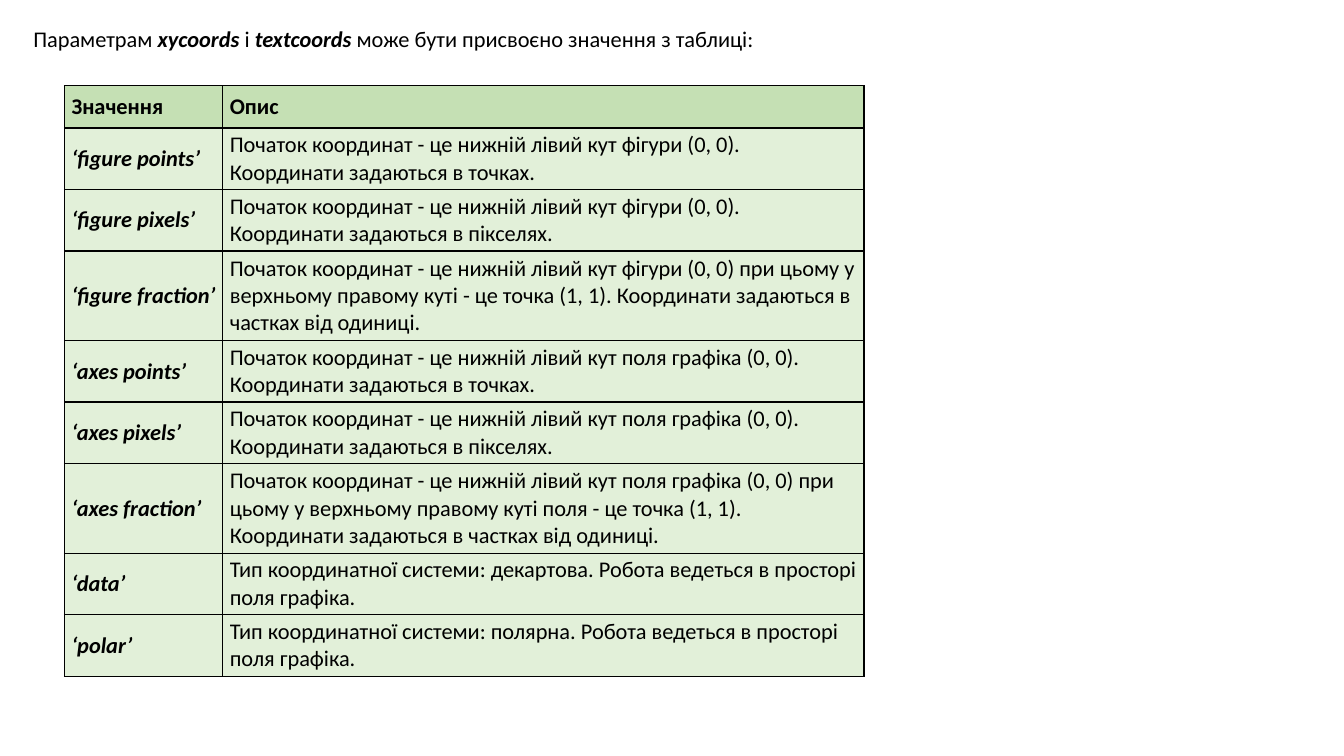
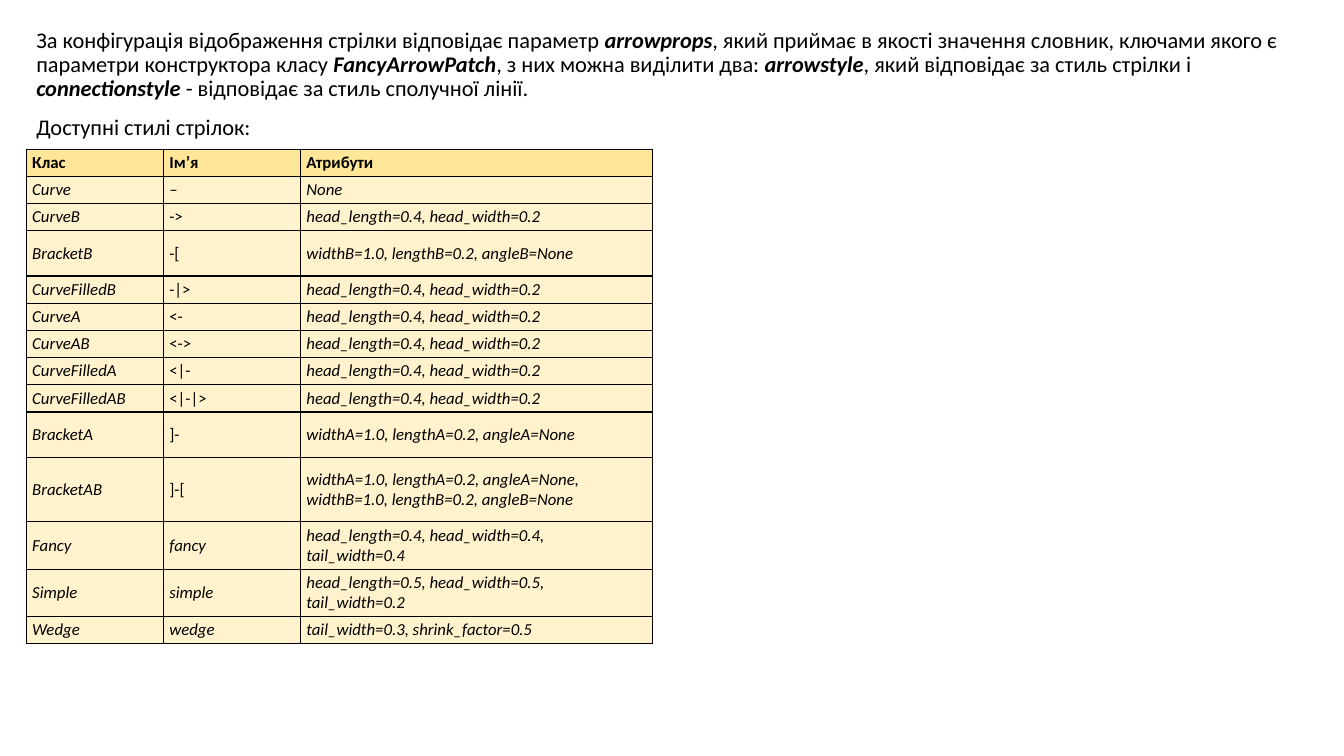
from dataclasses import dataclass

import lxml.etree
import pptx
import pptx.dml.color
import pptx.enum.text
import pptx.oxml.ns
import pptx.slide
import pptx.table
import pptx.text.text
import pptx.util
from pptx.util import Inches


@dataclass(frozen=True)
class Theme:
    font: str = "Calibri"
    ink: str = "000000"
    green_head: str = "C5E0B4"
    green_body: str = "E2F0D9"
    yellow_head: str = "FFE699"
    yellow_body: str = "FFF2CC"
    text_size: int = 16
    small_size: int = 12
    border: int = 1


THEME = Theme()


@dataclass(frozen=True)
class Column:
    heading: str
    width: float
    bold: bool = False
    italic: bool = False


@dataclass(frozen=True)
class Row:
    height: float
    values: tuple[str, ...]


@dataclass(frozen=True)
class Grid:
    left: float
    top: float
    head_height: float
    side_margin: float
    size: int
    head_fill: str
    body_fill: str
    columns: tuple[Column, ...]
    rows: tuple[Row, ...]


ORIGIN = "Початок координат - це нижній лівий кут "
FIGURE = ORIGIN + "фігури (0, 0)"
AXES = ORIGIN + "поля графіка (0, 0)"
IN_POINTS = ". Координати задаються в точках."
IN_PIXELS = ". Координати задаються в пікселях."
IN_FRACTIONS = " - це точка (1, 1). Координати задаються в частках від одиниці."
TOP_RIGHT = " при цьому у верхньому правому куті"
SYSTEM = "Тип координатної системи: {}. Робота ведеться в просторі поля графіка."
TWO_LINES, THREE_LINES = 0.61, 0.89

COORDINATES = Grid(
    left=0.64, top=0.85, head_height=0.42, side_margin=0.07, size=THEME.text_size,
    head_fill=THEME.green_head, body_fill=THEME.green_body,
    columns=(Column("Значення", 1.57, bold=True, italic=True), Column("Опис", 6.36)),
    rows=(
        Row(TWO_LINES, ("‘figure points’", FIGURE + IN_POINTS)),
        Row(TWO_LINES, ("‘figure pixels’", FIGURE + IN_PIXELS)),
        Row(THREE_LINES, ("‘figure fraction’", FIGURE + TOP_RIGHT + IN_FRACTIONS)),
        Row(TWO_LINES, ("‘axes points’", AXES + IN_POINTS)),
        Row(TWO_LINES, ("‘axes pixels’", AXES + IN_PIXELS)),
        Row(THREE_LINES, ("‘axes fraction’", AXES + TOP_RIGHT + " поля" + IN_FRACTIONS)),
        Row(TWO_LINES, ("‘data’", SYSTEM.format("декартова"))),
        Row(TWO_LINES, ("‘polar’", SYSTEM.format("полярна"))),
    ),
)

HEAD = "head_length=0.4, head_width=0.2"
BRACKET_A = "widthA=1.0, lengthA=0.2, angleA=None"
BRACKET_B = "widthB=1.0, lengthB=0.2, angleB=None"
SINGLE, BRACKET, DOUBLE_BRACKET, WRAPPED = 0.27, 0.45, 0.64, 0.47

ARROW_STYLES = Grid(
    left=0.26, top=1.48, head_height=SINGLE, side_margin=0.06, size=THEME.small_size,
    head_fill=THEME.yellow_head, body_fill=THEME.yellow_body,
    columns=(
        Column("Клас", 1.36, italic=True),
        Column("Ім’я", 1.36, italic=True),
        Column("Атрибути", 3.49, italic=True),
    ),
    rows=(
        Row(SINGLE, ("Curve", "–", "None")),
        Row(SINGLE, ("CurveB", "->", HEAD)),
        Row(BRACKET, ("BracketB", "-[", BRACKET_B)),
        Row(SINGLE, ("CurveFilledB", "-|>", HEAD)),
        Row(SINGLE, ("CurveA", "<-", HEAD)),
        Row(SINGLE, ("CurveAB", "<->", HEAD)),
        Row(SINGLE, ("CurveFilledA", "<|-", HEAD)),
        Row(SINGLE, ("CurveFilledAB", "<|-|>", HEAD)),
        Row(BRACKET, ("BracketA", "]-", BRACKET_A)),
        Row(DOUBLE_BRACKET, ("BracketAB", "]-[", BRACKET_A + ", " + BRACKET_B)),
        Row(WRAPPED, ("Fancy", "fancy", "head_length=0.4, head_width=0.4, tail_width=0.4")),
        Row(WRAPPED, ("Simple", "simple", "head_length=0.5, head_width=0.5, tail_width=0.2")),
        Row(SINGLE, ("Wedge", "wedge", "tail_width=0.3, shrink_factor=0.5")),
    ),
)


def rgb(value: str) -> pptx.dml.color.RGBColor:
    return pptx.dml.color.RGBColor.from_string(value)


def add_text(para: pptx.text.text._Paragraph, text: str, *, size: int = THEME.text_size,
             bold: bool = False, italic: bool = False) -> None:
    span = para.add_run()
    span.text = text
    span.font.name = THEME.font
    span.font.size = pptx.util.Pt(size)
    span.font.bold = bold
    span.font.italic = italic
    span.font.color.rgb = rgb(THEME.ink)


def add_page(deck: pptx.presentation.Presentation, left: float, top: float,
             paragraphs: tuple[str, ...]) -> pptx.slide.Slide:
    """Add a page whose body holds the paragraphs; *words* between asterisks are bold italic."""
    page = deck.slides.add_slide(deck.slide_layouts[1])
    title = page.shapes.title.element
    title.getparent().remove(title)
    body = page.placeholders[1]
    body.left, body.top = Inches(left), Inches(top)
    body.width, body.height = Inches(12.7), Inches(6.86)
    frame = body.text_frame
    frame.word_wrap = True
    frame.auto_size = pptx.enum.text.MSO_AUTO_SIZE.NONE
    frame.vertical_anchor = pptx.enum.text.MSO_ANCHOR.TOP
    for index, text in enumerate(paragraphs):
        para = frame.add_paragraph() if index else frame.paragraphs[0]
        properties = para._p.get_or_add_pPr()
        properties.set("marL", "0")
        properties.set("indent", "0")
        lxml.etree.SubElement(properties, pptx.oxml.ns.qn("a:buNone"))
        para.line_spacing = 0.9
        para.space_before = pptx.util.Pt(10 if index else 0)
        for part, words in enumerate(text.split("*")):
            if words:
                emphasis = part % 2 == 1
                add_text(para, words, bold=emphasis, italic=emphasis)
    return page


def add_borders(cell: pptx.table._Cell) -> None:
    properties = cell._tc.get_or_add_tcPr()
    for side in ("lnL", "lnR", "lnT", "lnB"):
        line = lxml.etree.SubElement(properties, pptx.oxml.ns.qn("a:" + side),
                                     w=str(pptx.util.Pt(THEME.border)))
        fill = lxml.etree.SubElement(line, pptx.oxml.ns.qn("a:solidFill"))
        lxml.etree.SubElement(fill, pptx.oxml.ns.qn("a:srgbClr"), val=THEME.ink)


def fill_cell(cell: pptx.table._Cell, grid: Grid, text: str, *, fill: str,
              bold: bool, italic: bool) -> None:
    add_borders(cell)
    cell.fill.solid()
    cell.fill.fore_color.rgb = rgb(fill)
    cell.margin_left = cell.margin_right = Inches(grid.side_margin)
    cell.margin_top = cell.margin_bottom = Inches(0.03)
    cell.vertical_anchor = pptx.enum.text.MSO_ANCHOR.MIDDLE
    add_text(cell.text_frame.paragraphs[0], text, size=grid.size, bold=bold, italic=italic)


def add_grid(page: pptx.slide.Slide, grid: Grid) -> None:
    """Draw the table; cells made of symbols only stay upright."""
    heights = [grid.head_height] + [row.height for row in grid.rows]
    table = page.shapes.add_table(
        len(heights), len(grid.columns), Inches(grid.left), Inches(grid.top),
        Inches(sum(column.width for column in grid.columns)), Inches(sum(heights)),
    ).table
    table.first_row = table.horz_banding = False
    for table_row, height in zip(table.rows, heights):
        table_row.height = Inches(height)
    for place, column in enumerate(grid.columns):
        table.columns[place].width = Inches(column.width)
        fill_cell(table.cell(0, place), grid, column.heading,
                  fill=grid.head_fill, bold=True, italic=False)
        for number, row in enumerate(grid.rows, start=1):
            text = row.values[place]
            has_letters = any(letter.isalpha() for letter in text)
            fill_cell(table.cell(number, place), grid, text, fill=grid.body_fill,
                      bold=column.bold, italic=column.italic and has_letters)


def main() -> None:
    deck = pptx.Presentation()
    deck.slide_width, deck.slide_height = Inches(13.33), Inches(7.5)

    page = add_page(deck, 0.23, 0.23, (
        "Параметрам *xycoords *і *textcoords* може бути присвоєно значення з таблиці:",
    ))
    add_grid(page, COORDINATES)

    page = add_page(deck, 0.26, 0.24, (
        "За конфігурація відображення стрілки відповідає параметр *arrowprops*, який приймає "
        "в якості значення словник, ключами якого є параметри конструктора класу "
        "*FancyArrowPatch*, з них можна виділити два: *arrowstyle*, який відповідає за стиль "
        "стрілки і *connectionstyle* - відповідає за стиль сполучної лінії.",
        "Доступні стилі стрілок:",
    ))
    add_grid(page, ARROW_STYLES)

    deck.save("out.pptx")


if __name__ == "__main__":
    main()
